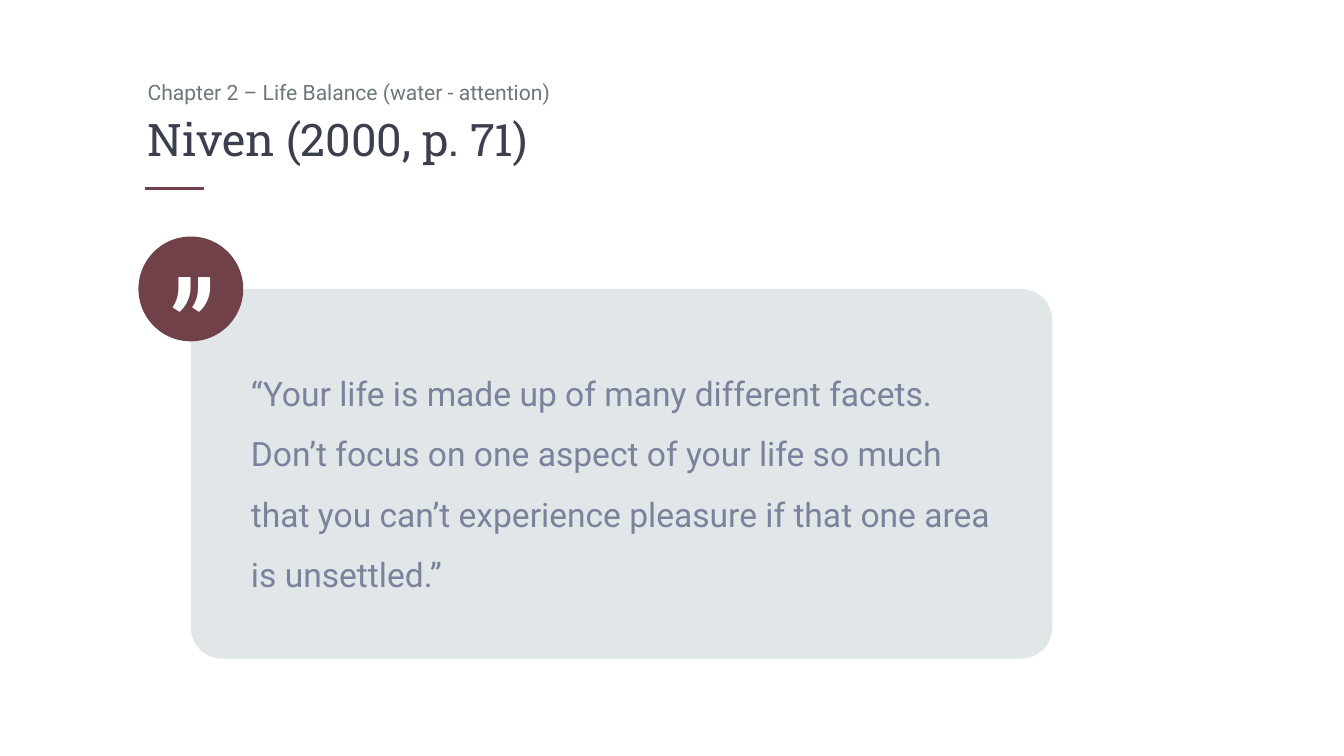
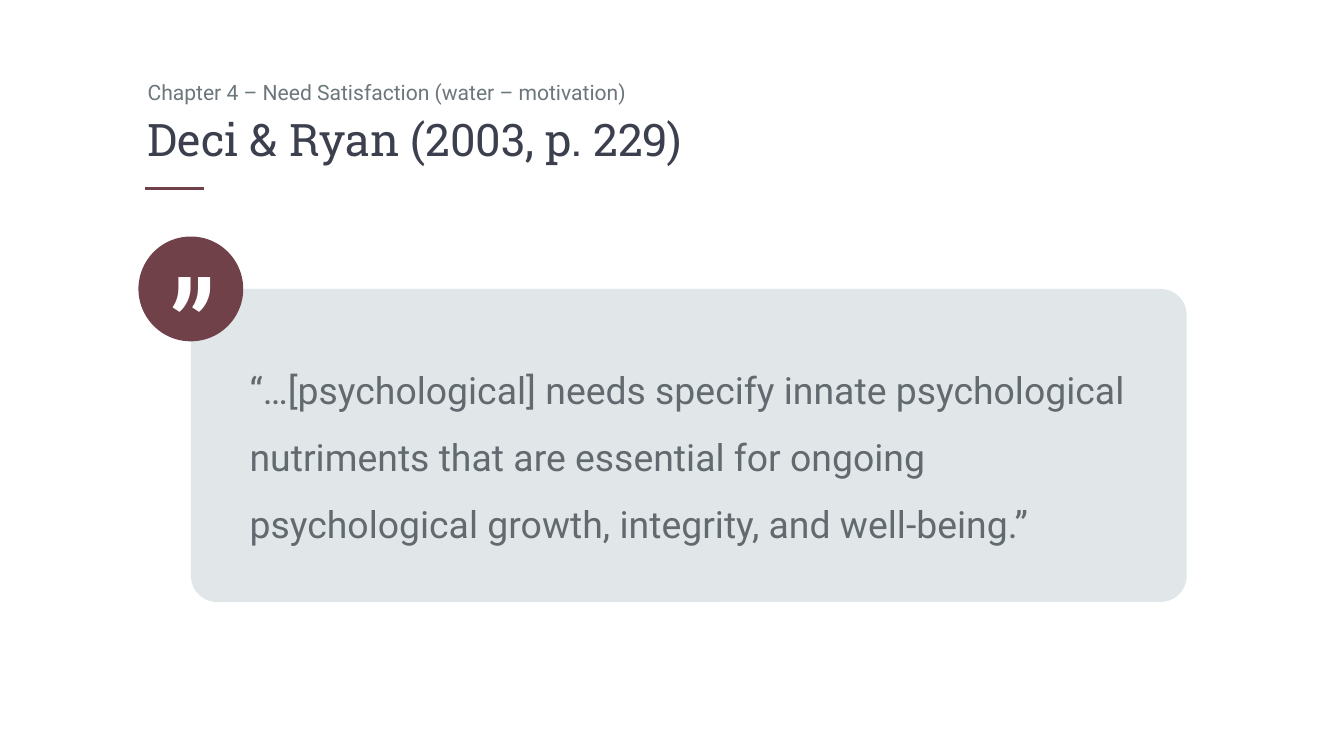
"""Build two quotation slides that share a heading, a rule and a quote badge."""
from dataclasses import dataclass

from lxml import etree
from pptx import Presentation
from pptx import util as u
from pptx.dml.color import RGBColor
from pptx.enum import shapes, text
from pptx.oxml.ns import qn


@dataclass(frozen=True)
class Theme:
    accent: str = "704149"
    panel: str = "E1E7E9"
    chapter: str = "6C777C"
    title: str = "3C3F4D"
    white: str = "FFFFFF"
    body_font: str = "Roboto"
    title_font: str = "Roboto Slab"
    chapter_size: float = 11.3
    title_size: float = 24
    mark_size: float = 67.5
    rule_width: float = 1.75


theme = Theme()


def write_text(shape, content, *, size, color, font=theme.body_font,
               anchor=text.MSO_ANCHOR.TOP, insets=(0.1, 0.05), spacing=None):
    frame = shape.text_frame
    frame.word_wrap = True
    frame.vertical_anchor = anchor
    frame.margin_left = frame.margin_right = u.Inches(insets[0])
    frame.margin_top = frame.margin_bottom = u.Inches(insets[1])
    paragraph = frame.paragraphs[0]
    paragraph.alignment = text.PP_ALIGN.LEFT
    if spacing:
        paragraph.line_spacing = spacing
    run = paragraph.add_run()
    run.text = content
    run.font.name = font
    run.font.size = u.Pt(size)
    run.font.color.rgb = RGBColor.from_string(color)


def add_filled(slide, kind, left, top, width, height, color):
    shape = slide.shapes.add_shape(kind, *map(u.Inches, (left, top, width, height)))
    shape.shadow.inherit = False
    shape.fill.solid()
    shape.fill.fore_color.rgb = RGBColor.from_string(color)
    shape.line.fill.background()
    return shape


quotes = [
    dict(chapter="Chapter 2 – Life Balance (water - attention)",
         source="Niven (2000, p. 71)",
         quote="“Your life is made up of many different facets. Don’t focus on one "
               "aspect of your life so much that you can’t experience pleasure if "
               "that one area is unsettled.”",
         width=6.41, height=2.75, size=18, color="7D829C"),
    dict(chapter="Chapter 4 – Need Satisfaction (water – motivation)",
         source="Deci & Ryan (2003, p. 229)",
         quote="“…[psychological] needs specify innate psychological nutriments "
               "that are essential for ongoing psychological growth, integrity, "
               "and well-being.”",
         width=7.41, height=2.33, size=20, color="626A6F"),
]
panel_left, panel_top = 1.42, 2.15
badge_size = 0.78

presentation = Presentation()
presentation.slide_width = u.Inches(10)
presentation.slide_height = u.Inches(10 * 9 / 16)

for item in quotes:
    slide = presentation.slides.add_slide(presentation.slide_layouts[6])

    rule = slide.shapes.add_connector(
        shapes.MSO_CONNECTOR.STRAIGHT, *map(u.Inches, (1.08, 1.4, 1.52, 1.4)))
    rule.line.color.rgb = RGBColor.from_string(theme.accent)
    rule.line.width = u.Pt(theme.rule_width)
    etree.SubElement(rule._element.spPr, qn("a:effectLst"))

    chapter = slide.shapes.add_textbox(*map(u.Inches, (1, 0.54, 5.5, 0.35)))
    write_text(chapter, item["chapter"], size=theme.chapter_size, color=theme.chapter)

    title = slide.shapes.add_textbox(*map(u.Inches, (1, 0.56, 8.33, 0.94)))
    write_text(title, item["source"], size=theme.title_size, color=theme.title,
               font=theme.title_font, anchor=text.MSO_ANCHOR.MIDDLE)

    panel = add_filled(slide, shapes.MSO_SHAPE.ROUNDED_RECTANGLE, panel_left, panel_top,
                       item["width"], item["height"], theme.panel)
    panel.adjustments[0] = 0.084
    write_text(panel, item["quote"], size=item["size"], color=item["color"],
               anchor=text.MSO_ANCHOR.MIDDLE, insets=(0.38, 0.38), spacing=1.5)

    add_filled(slide, shapes.MSO_SHAPE.OVAL, panel_left - badge_size / 2,
               panel_top - badge_size / 2, badge_size, badge_size, theme.accent)

    mark = slide.shapes.add_textbox(*map(u.Inches, (1.25, 1.84, 0.56, 1.14)))
    write_text(mark, "”", size=theme.mark_size, color=theme.white,
               font=theme.title_font, insets=(0.01, 0))
    mark.text_frame.auto_size = text.MSO_AUTO_SIZE.SHAPE_TO_FIT_TEXT

presentation.save("out.pptx")
